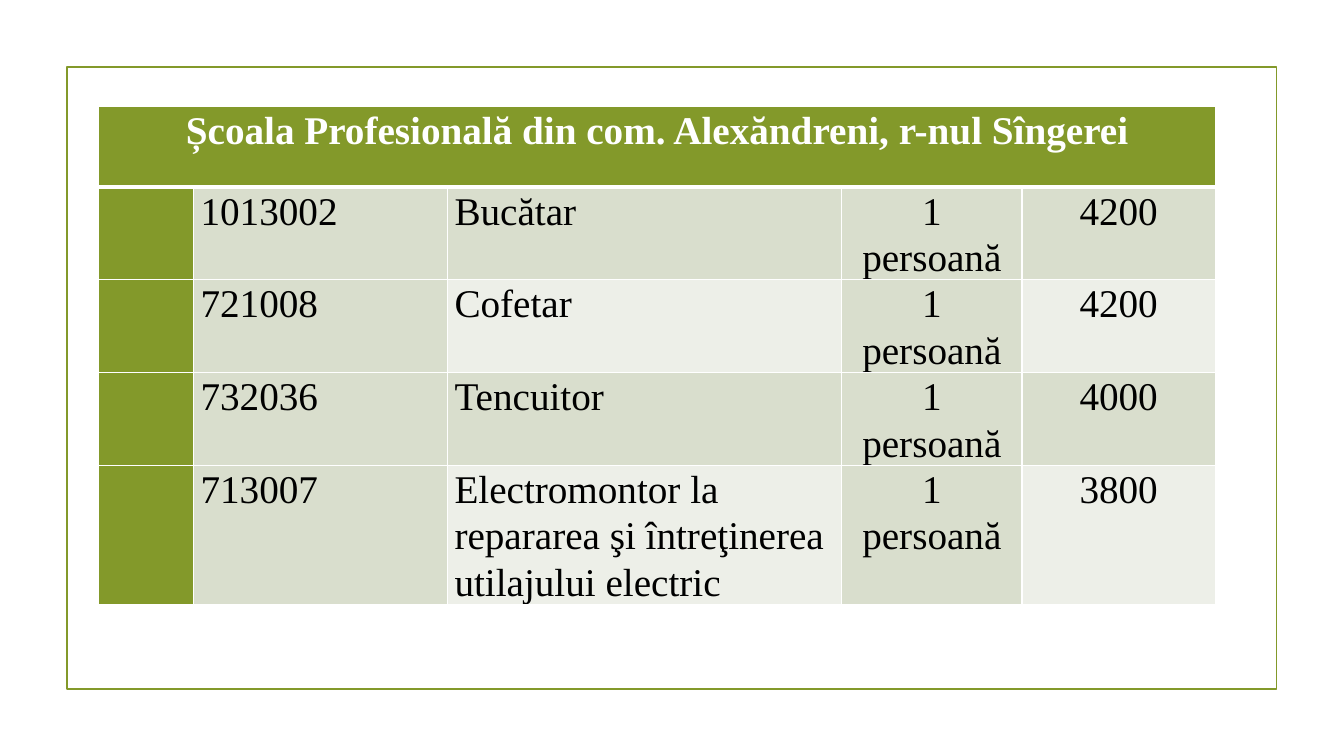
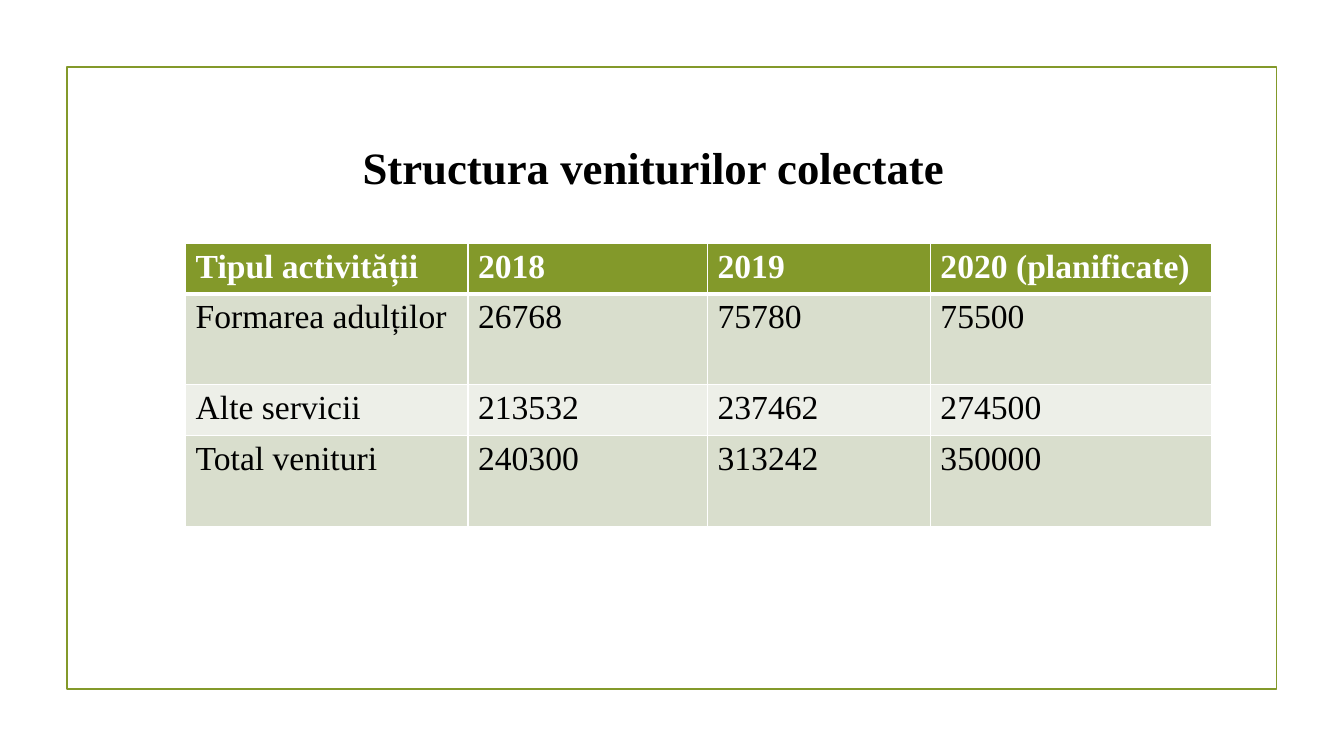
from dataclasses import dataclass
from lxml.etree import SubElement
from pptx import Presentation
from pptx.dml.color import RGBColor
from pptx.enum.shapes import MSO_SHAPE
from pptx.enum.text import MSO_ANCHOR, PP_ALIGN
from pptx.oxml.ns import qn
from pptx.util import Pt


@dataclass(frozen=True)
class Theme:
    font: str = "Times New Roman"
    green: str = "83992A"
    band_dark: str = "D9DECD"
    band_light: str = "EDEFE8"
    white: str = "FFFFFF"
    black: str = "000000"
    title_size: float = 32
    schools_size: float = 28
    income_size: float = 24


theme = Theme()


def write_text(frame, text, size, color=theme.black, bold=False,
               align=PP_ALIGN.LEFT, spacing=1.0, after=0):
    frame.text = text
    frame.word_wrap = True
    paragraph = frame.paragraphs[0]
    paragraph.alignment = align
    paragraph.line_spacing = spacing
    paragraph.space_after = Pt(after)
    font = paragraph.font
    font.name = theme.font
    font.size = Pt(size)
    font.bold = bold
    font.color.rgb = RGBColor.from_string(color)


def add_grid(slide, left, top, widths, heights, rows, fills, margins, aligns, **text_format):
    table = slide.shapes.add_table(
        len(heights), len(widths), Pt(left), Pt(top), Pt(sum(widths)), Pt(sum(heights))
    ).table
    table.horz_banding = False
    for column, width in zip(table.columns, widths):
        column.width = Pt(width)
    for row, height in zip(table.rows, heights):
        row.height = Pt(height)
    for row_index, row in enumerate(rows):
        header = row_index == 0
        for column_index, text in enumerate(row):
            cell = table.cell(row_index, column_index)
            cell.margin_left = cell.margin_right = Pt(margins[0])
            cell.margin_top = cell.margin_bottom = Pt(margins[1])
            properties = cell._tc.get_or_add_tcPr()
            edges = {"lnL": 1, "lnR": 1, "lnT": 3 if row_index == 1 else 1, "lnB": 3 if header else 1}
            for edge, width in edges.items():
                line = SubElement(properties, qn(f"a:{edge}"), w=str(Pt(width)))
                SubElement(SubElement(line, qn("a:solidFill")), qn("a:srgbClr"), val=theme.white)
            fill = theme.green if header else fills(row_index, column_index)
            cell.fill.solid()
            cell.fill.fore_color.rgb = RGBColor.from_string(fill)
            if text:
                write_text(cell.text_frame, text, bold=header,
                           color=theme.white if header else theme.black,
                           align=aligns[0] if header else aligns[1][column_index], **text_format)
    return table


presentation = Presentation()
presentation.slide_width = Pt(960)
presentation.slide_height = Pt(540)
title_only, blank = presentation.slide_layouts[5], presentation.slide_layouts[6]
schools_slide = presentation.slides.add_slide(blank)
income_slide = presentation.slides.add_slide(title_only)

for slide in presentation.slides:
    border = slide.shapes.add_shape(MSO_SHAPE.RECTANGLE, Pt(47.8), Pt(48), Pt(864), Pt(444))
    border.shadow.inherit = False
    border.fill.background()
    border.line.color.rgb = RGBColor.from_string(theme.green)
    border.line.width = Pt(1.25)

bands = (theme.band_light, theme.band_dark)
courses = [
    ("1013002", "Bucătar", "4200"),
    ("721008", "Cofetar", "4200"),
    ("732036", "Tencuitor", "4000"),
    ("713007", "Electromontor la repararea şi întreţinerea utilajului electric", "3800"),
]
schools_rows = [("Școala Profesională din com. Alexăndreni, r-nul Sîngerei", "", "", "", "")]
schools_rows += [("", code, course, "1 persoană", wage) for code, course, wage in courses]
schools_table = add_grid(
    schools_slide, 70.6, 76, [67.7, 181.4, 281.5, 128.9, 138], [57.6, 66, 66, 66, 99],
    schools_rows,
    lambda row, column: (theme.green, theme.band_dark, bands[row % 2],
                         theme.band_dark, bands[row % 2])[column],
    (5, 0),
    (PP_ALIGN.CENTER, [PP_ALIGN.LEFT, PP_ALIGN.JUSTIFY, PP_ALIGN.LEFT,
                       PP_ALIGN.CENTER, PP_ALIGN.CENTER]),
    size=theme.schools_size, spacing=1.07, after=8,
)
schools_table.cell(0, 0).merge(schools_table.cell(0, 4))

title = income_slide.shapes.title
title.left, title.top, title.width, title.height = Pt(58.4), Pt(96), Pt(817), Pt(70)
title.text_frame.vertical_anchor = MSO_ANCHOR.TOP
write_text(title.text_frame, "Structura veniturilor colectate", theme.title_size,
           bold=True, align=PP_ALIGN.CENTER)

income_rows = [
    ("Tipul activității", "2018", "2019", "2020 (planificate)"),
    ("Formarea adulților", "26768", "75780", "75500"),
    ("Alte servicii", "213532", "237462", "274500"),
    ("Total venituri", "240300", "313242", "350000"),
]
add_grid(
    income_slide, 132.6, 173.8, [201.7, 171.1, 159.2, 200.8], [36, 65, 36, 65],
    income_rows, lambda row, column: bands[row % 2], (7.2, 3.6),
    (PP_ALIGN.LEFT, [PP_ALIGN.LEFT] * 4), size=theme.income_size,
)

presentation.save("out.pptx")
